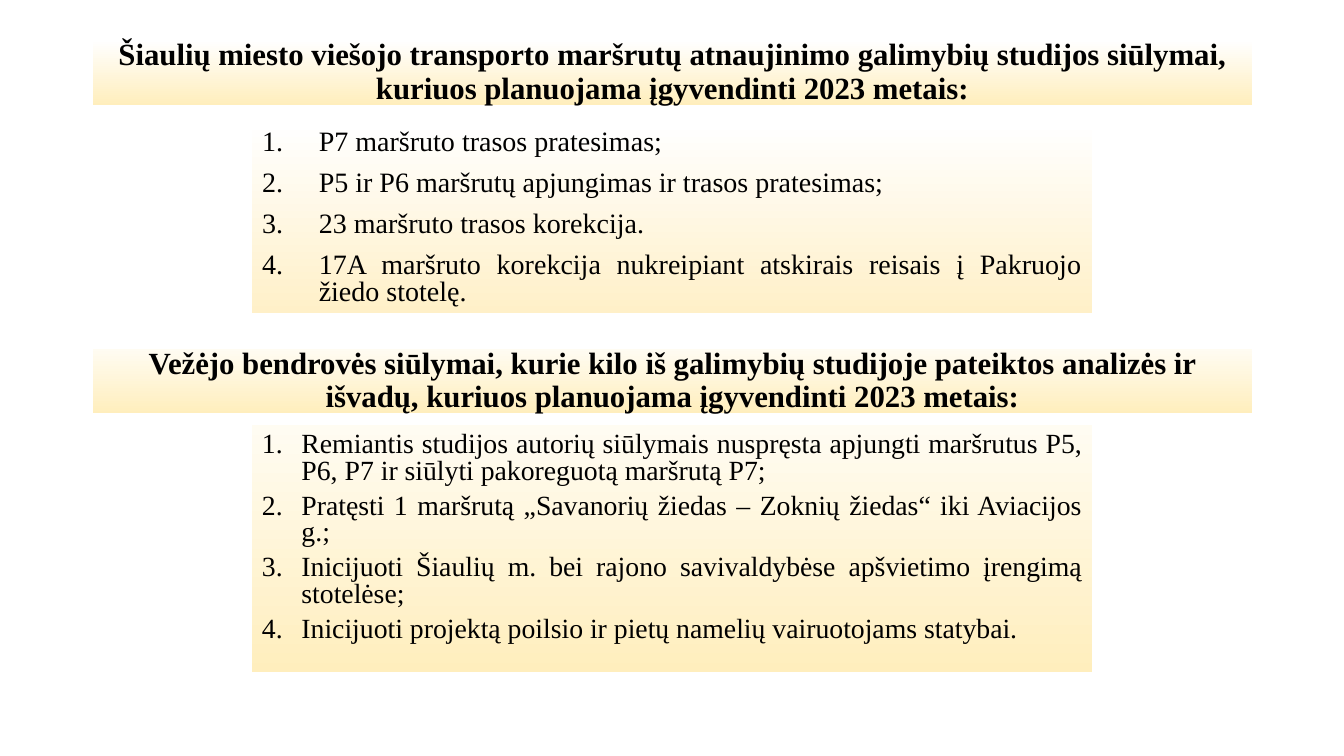
from lxml import etree
from pptx import Presentation
from pptx.dml.color import RGBColor
from pptx.enum import text
from pptx.oxml import ns
from pptx.util import Pt

FONT = "Times New Roman"
BLACK = RGBColor(0, 0, 0)
WHITE = RGBColor(0xFF, 0xFF, 0xFF)
IVORY = RGBColor(0xFF, 0xFC, 0xF2)
CREAM = RGBColor(0xFF, 0xF0, 0xC8)
GOLD = RGBColor(0xFF, 0xEE, 0xBD)

STUDY_HEADING = (
    "Šiaulių miesto viešojo transporto maršrutų atnaujinimo galimybių "
    "studijos siūlymai, kuriuos planuojama įgyvendinti 2023 metais:"
)
STUDY_PROPOSALS = [
    "P7 maršruto trasos pratesimas;",
    "P5 ir P6 maršrutų apjungimas ir trasos pratesimas;",
    "23 maršruto trasos korekcija.",
    "17A maršruto korekcija nukreipiant atskirais reisais į Pakruojo žiedo stotelę.",
]
OPERATOR_HEADING = (
    "Vežėjo bendrovės siūlymai, kurie kilo iš galimybių studijoje pateiktos "
    "analizės ir išvadų, kuriuos planuojama įgyvendinti 2023 metais:"
)
OPERATOR_PROPOSALS = [
    "Remiantis studijos autorių siūlymais nuspręsta apjungti maršrutus "
    "P5, P6, P7 ir siūlyti pakoreguotą maršrutą P7;",
    "Pratęsti 1 maršrutą „Savanorių žiedas – Zoknių žiedas“ iki Aviacijos g.;",
    "Inicijuoti Šiaulių m. bei rajono savivaldybėse apšvietimo įrengimą stotelėse;",
    "Inicijuoti projektą poilsio ir pietų namelių vairuotojams statybai.",
]


def place(box, left, top, width, height):
    box.left, box.top = Pt(left), Pt(top)
    box.width, box.height = Pt(width), Pt(height)


def fill_downwards(box, upper, lower):
    """Fill the box with a gradient that runs from top to bottom."""
    box.fill.gradient()
    box.fill.gradient_angle = 270
    for stop, colour in zip(box.fill.gradient_stops, (upper, lower)):
        stop.color.rgb = colour


def prepare_frame(box, anchor):
    frame = box.text_frame
    frame.word_wrap = True
    frame.auto_size = text.MSO_AUTO_SIZE.NONE
    frame.vertical_anchor = anchor
    return frame


def set_font(para, size, bold=False):
    para.font.name = FONT
    para.font.size = Pt(size)
    para.font.bold = bold
    para.font.color.rgb = BLACK


def write_heading(box, top, wording, upper, lower):
    place(box, 66.25, top, 828, 46)
    fill_downwards(box, upper, lower)
    para = prepare_frame(box, text.MSO_ANCHOR.MIDDLE).paragraphs[0]
    para.text = wording
    para.alignment = text.PP_ALIGN.CENTER
    para.line_spacing = 0.9
    set_font(para, 22, bold=True)


def number_paragraph(para, indent):
    props = para._p.get_or_add_pPr()
    props.set("marL", str(Pt(indent)))
    props.set("indent", str(Pt(-indent)))
    etree.SubElement(props, ns.qn("a:buFont"), typeface="+mj-lt")
    etree.SubElement(props, ns.qn("a:buAutoNum"), type="arabicPeriod")


def write_list(box, top, height, items, size, indent, gap, upper, lower):
    place(box, 180, top, 600, height)
    fill_downwards(box, upper, lower)
    frame = prepare_frame(box, text.MSO_ANCHOR.TOP)
    frame.margin_top = Pt(5)
    for index, item in enumerate(items):
        para = frame.add_paragraph() if index else frame.paragraphs[0]
        para.text = item
        number_paragraph(para, indent)
        para.alignment = text.PP_ALIGN.JUSTIFY
        para.line_spacing = 0.8
        para.space_before = Pt(gap if index else 0)
        para.space_after = Pt(0)
        set_font(para, size)


def add_box(page):
    return page.shapes.add_textbox(Pt(0), Pt(0), Pt(100), Pt(100))


def main():
    deck = Presentation()
    deck.slide_width, deck.slide_height = Pt(960), Pt(540)
    page = deck.slides.add_slide(deck.slide_layouts[1])

    write_heading(page.shapes.title, 28.8, STUDY_HEADING, WHITE, GOLD)
    write_list(page.placeholders[1], 87.8, 136, STUDY_PROPOSALS,
               20, 40.5, 10, WHITE, CREAM)
    write_heading(add_box(page), 249.2, OPERATOR_HEADING, IVORY, GOLD)
    write_list(add_box(page), 303.8, 176.5, OPERATOR_PROPOSALS,
               19.8, 28.25, 6, IVORY, GOLD)

    deck.save("out.pptx")


if __name__ == "__main__":
    main()
